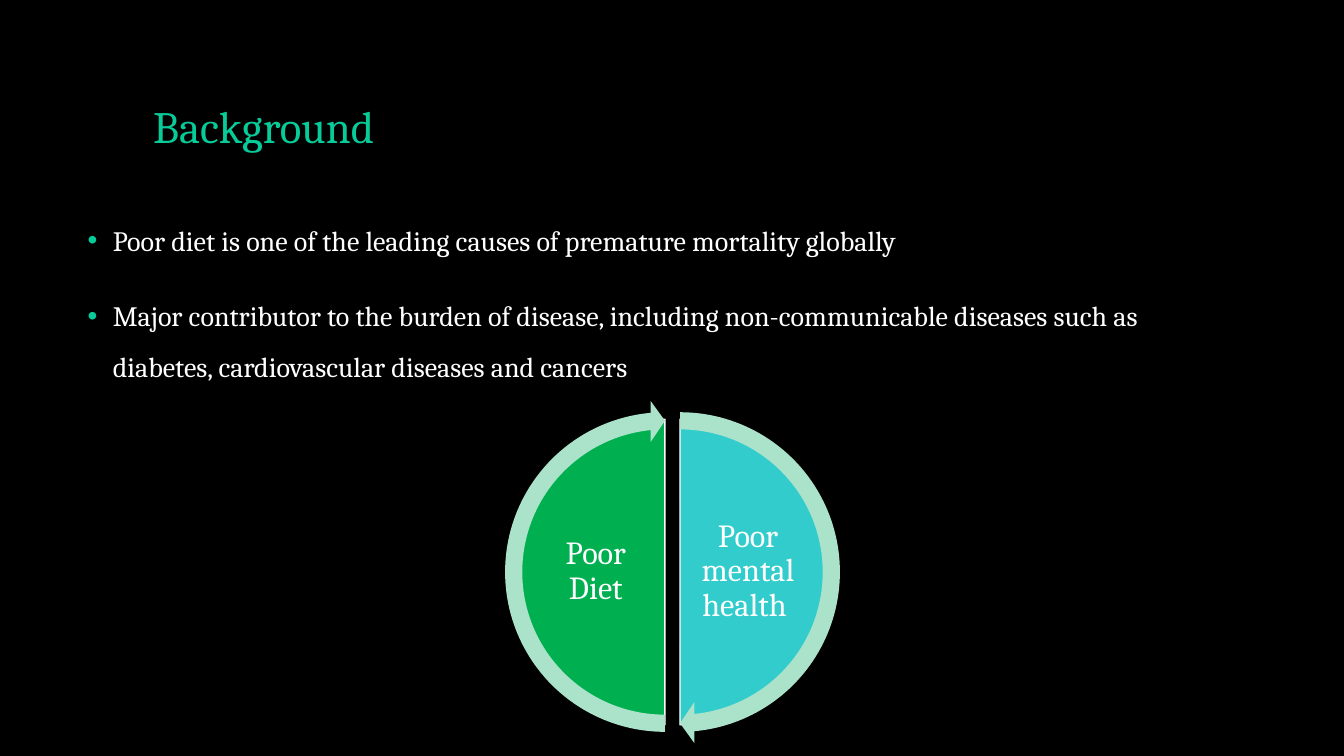
from collections import namedtuple
from dataclasses import dataclass

from lxml import etree
from pptx import Presentation
from pptx.dml.color import RGBColor
from pptx.enum.shapes import MSO_SHAPE as Preset
from pptx.enum.text import MSO_ANCHOR as Anchor, PP_ALIGN as Align
from pptx.oxml.ns import qn
from pptx.util import Inches, Pt


@dataclass(frozen=True)
class Theme:
    font: str = "Cambria"
    background: str = "000000"
    accent: str = "07CB98"
    text: str = "FFFFFF"
    diet: str = "00B050"
    mental_health: str = "33CCCC"
    arrow: str = "ABE2CA"
    title_size: int = 32
    body_size: int = 20
    label_size: int = 23


THEME = Theme()
Box = namedtuple("Box", "left top width height")
Half = namedtuple("Half", "label color offset label_left pie_angles arrow_angles")

# Angles are in units of 100000 / 60000 degrees: 54 is 90°, 162 is 270°.
HALVES = (
    Half("Poor mental health ", THEME.mental_health, 0.15, 1.84, (162, 54), (50.73, 162)),
    Half("Poor Diet", THEME.diet, 0, 0.48, (54, 162), (158.73, 54)),
)
BULLETS = (
    "Poor diet is one of the leading causes of premature mortality globally",
    "Major contributor to the burden of disease, including non-communicable "
    "diseases such as diabetes, cardiovascular diseases and cancers",
)


def to_inches(box):
    return [Inches(length) for length in box]


def add_text_frame(shapes, box, anchor):
    frame = shapes.add_textbox(*to_inches(box)).text_frame
    frame.word_wrap = True
    frame.vertical_anchor = anchor
    return frame


def add_run(paragraph, text, size, color):
    run = paragraph.add_run()
    run.text = text
    run.font.name = THEME.font
    run.font.size = Pt(size)
    run.font.color.rgb = RGBColor.from_string(color)


def set_bullet(paragraph):
    properties = paragraph._p.get_or_add_pPr()
    properties.set("marL", str(Inches(0.25)))
    properties.set("indent", str(Inches(-0.25)))
    color = etree.SubElement(properties, qn("a:buClr"))
    etree.SubElement(color, qn("a:srgbClr"), val=THEME.accent)
    etree.SubElement(properties, qn("a:buFont"), typeface="Arial")
    etree.SubElement(properties, qn("a:buChar"), char="•")


def add_title(slide, box, text):
    paragraph = add_text_frame(slide.shapes, box, Anchor.BOTTOM).paragraphs[0]
    paragraph.line_spacing = 0.9
    add_run(paragraph, text, THEME.title_size, THEME.accent)


def add_bullets(slide, box, texts):
    frame = add_text_frame(slide.shapes, box, Anchor.TOP)
    for index, text in enumerate(texts):
        paragraph = frame.add_paragraph() if index else frame.paragraphs[0]
        paragraph.line_spacing = 1.5
        paragraph.space_before = Pt(18)
        set_bullet(paragraph)
        add_run(paragraph, text, THEME.body_size, THEME.text)


def add_preset(shapes, preset, box, adjustments, color):
    shape = shapes.add_shape(preset, *to_inches(box))
    for index, value in enumerate(adjustments):
        shape.adjustments[index] = value
    shape.shadow.inherit = False
    shape.fill.solid()
    shape.fill.fore_color.rgb = RGBColor.from_string(color)
    shape.line.fill.background()
    return shape


def add_half(shapes, box, half):
    """Add one half disc and its label."""
    inset = 0.19
    diameter = box.height - 2 * inset
    pie_box = Box(box.left + half.offset + inset, box.top + inset, diameter, diameter)
    pie = add_preset(shapes, Preset.PIE, pie_box, half.pie_angles, half.color)
    pie.line.color.rgb = RGBColor.from_string(THEME.text)
    pie.line.width = Pt(1)

    label_box = Box(box.left + half.offset + half.label_left, box.top + 0.98, 1.08, 1.44)
    frame = add_text_frame(shapes, label_box, Anchor.MIDDLE)
    frame.margin_left = frame.margin_right = Inches(0.03)
    frame.margin_top = frame.margin_bottom = Inches(0.03)
    paragraph = frame.paragraphs[0]
    paragraph.alignment = Align.CENTER
    paragraph.line_spacing = 0.9
    add_run(paragraph, half.label, THEME.label_size, THEME.text)


def add_cycle(slide, box, halves):
    """Add the half discs, then the arrows that run around them."""
    shapes = slide.shapes.add_group_shape().shapes
    for half in halves:
        add_half(shapes, box, half)
    for half in halves:
        arrow_box = Box(box.left + half.offset, box.top, box.height, box.height)
        adjustments = (0.05, 3.28, *half.arrow_angles, 0.06)
        add_preset(shapes, Preset.CIRCULAR_ARROW, arrow_box, adjustments, THEME.arrow)


def add_background_slide(presentation):
    slide = presentation.slides.add_slide(presentation.slide_layouts[6])
    slide.background.fill.solid()
    slide.background.fill.fore_color.rgb = RGBColor.from_string(THEME.background)
    add_bullets(slide, Box(0.77, 2, 11.15, 4.76), BULLETS)
    add_title(slide, Box(1.42, 0.4, 10.5, 1.17), "Background")
    add_cycle(slide, Box(4.89, 3.97, 3.56, 3.41), HALVES)


def main():
    presentation = Presentation()
    presentation.slide_width = Inches(13.33)
    presentation.slide_height = Inches(7.5)
    add_background_slide(presentation)
    presentation.save("out.pptx")


if __name__ == "__main__":
    main()
